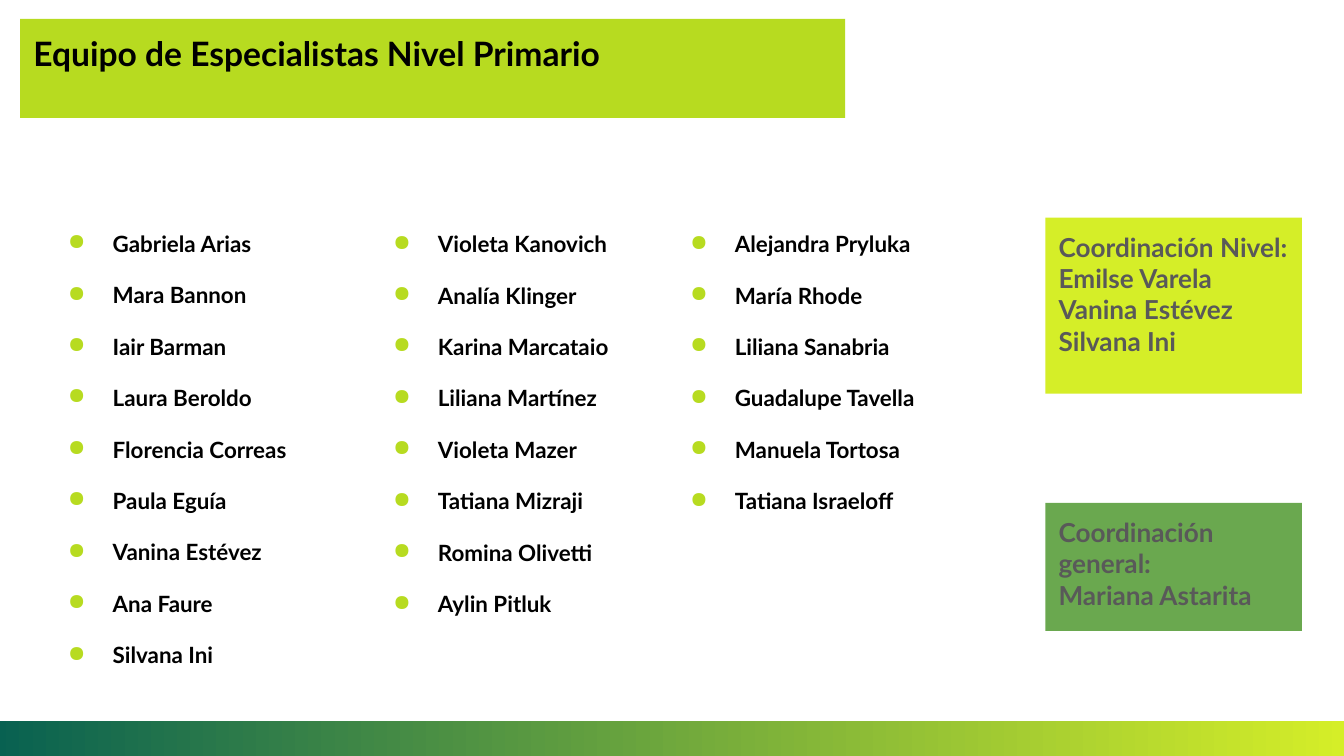
from lxml.etree import SubElement
from pptx import Presentation
from pptx.dml.color import RGBColor
from pptx.enum.shapes import MSO_SHAPE
from pptx.enum.text import MSO_ANCHOR, MSO_AUTO_SIZE, PP_ALIGN
from pptx.oxml.ns import qn
from pptx.util import Pt

LIME, YELLOW, GREEN, TEAL = "B7DB20", "D5EE28", "6AA84F", "086151"
BLACK, GRAY = "000000", "595959"

# Left, top and width of each column of specialists
COLUMNS = [
    ((17.3, 113.8, 159), ["Gabriela Arias", "Mara Bannon", "Iair Barman",
                          "Laura Beroldo", "Florencia Correas", "Paula Eguía",
                          "Vanina Estévez", "Ana Faure", "Silvana Ini"]),
    ((191.5, 114, 159), ["Violeta Kanovich", "Analía Klinger", "Karina Marcataio",
                         "Liliana Martínez", "Violeta Mazer", "Tatiana Mizraji",
                         "Romina Olivetti", "Aylin Pitluk"]),
    ((350.6, 114, 178.5), ["Alejandra Pryluka", "María Rhode", "Liliana Sanabria",
                           "Guadalupe Tavella", "Manuela Tortosa",
                           "Tatiana Israeloff"]),
]


def color(hex_code):
    return RGBColor.from_string(hex_code)


def write_lines(frame, lines, size, ink):
    """Fill a text frame with one bold paragraph per line."""
    frame.word_wrap = True
    frame.vertical_anchor = MSO_ANCHOR.TOP
    frame.margin_left = frame.margin_right = Pt(7.2)
    frame.margin_top = frame.margin_bottom = Pt(7.2)
    for i, line in enumerate(lines):
        paragraph = frame.paragraphs[0] if i == 0 else frame.add_paragraph()
        paragraph.text = line
        paragraph.alignment = PP_ALIGN.LEFT
        font = paragraph.font
        font.name, font.size, font.bold = "Lato", Pt(size), True
        font.color.rgb = color(ink)


def add_bar(slide, left, top, width, height):
    bar = slide.shapes.add_shape(MSO_SHAPE.RECTANGLE, Pt(left), Pt(top),
                                 Pt(width), Pt(height))
    bar.shadow.inherit = False
    bar.line.fill.background()
    return bar


def add_panel(slide, box, fill, lines, size, ink):
    """Solid rectangle with text at its top left."""
    panel = add_bar(slide, *box)
    panel.fill.solid()
    panel.fill.fore_color.rgb = color(fill)
    write_lines(panel.text_frame, lines, size, ink)


def add_footer(slide, box):
    """Gradient strip, from teal on the left to yellow on the right."""
    fill = add_bar(slide, *box).fill
    fill.gradient()
    fill.gradient_angle = 180
    for stop, shade in zip(fill.gradient_stops, (YELLOW, TEAL)):
        stop.color.rgb = color(shade)


def add_bullet(paragraph):
    properties = paragraph._p.get_or_add_pPr()
    properties.set("marL", str(Pt(36)))
    properties.set("indent", str(Pt(-24)))
    bullet_color = SubElement(properties, qn("a:buClr"))
    SubElement(bullet_color, qn("a:srgbClr"), val=LIME)
    SubElement(properties, qn("a:buChar"), char="●")
    # The default run properties must follow the bullet
    properties.append(properties.find(qn("a:defRPr")))


def add_names(slide, box, names):
    """Bulleted column of names, as tall as its lines."""
    left, top, width = box
    height = 27.6 * len(names) + 3.4
    column = slide.shapes.add_textbox(Pt(left), Pt(top), Pt(width), Pt(height))
    frame = column.text_frame
    write_lines(frame, names, 12, BLACK)
    frame.auto_size = MSO_AUTO_SIZE.SHAPE_TO_FIT_TEXT
    for paragraph in frame.paragraphs:
        add_bullet(paragraph)
        paragraph.alignment = PP_ALIGN.JUSTIFY
        paragraph.line_spacing = 1.15
        paragraph.space_before = Pt(11)


def main():
    deck = Presentation()
    deck.slide_width, deck.slide_height = Pt(720), Pt(405)
    slide = deck.slides.add_slide(deck.slide_layouts[6])

    # Title and footer
    add_panel(slide, (10.8, 10.2, 442, 53), LIME,
              ["Equipo de Especialistas Nivel Primario"], 18, BLACK)
    add_footer(slide, (-3.6, 386.2, 724.3, 18.8))

    # Specialists
    for box, names in COLUMNS:
        add_names(slide, box, names)

    # Coordinators
    add_panel(slide, (560, 116.6, 137.4, 94.3), YELLOW,
              ["Coordinación Nivel:", "Emilse Varela", "Vanina Estévez",
               "Silvana Ini"], 14, GRAY)
    add_panel(slide, (560, 269.4, 137.4, 68.6), GREEN,
              ["Coordinación general:", "Mariana Astarita"], 14, GRAY)

    deck.save("out.pptx")


if __name__ == "__main__":
    main()
